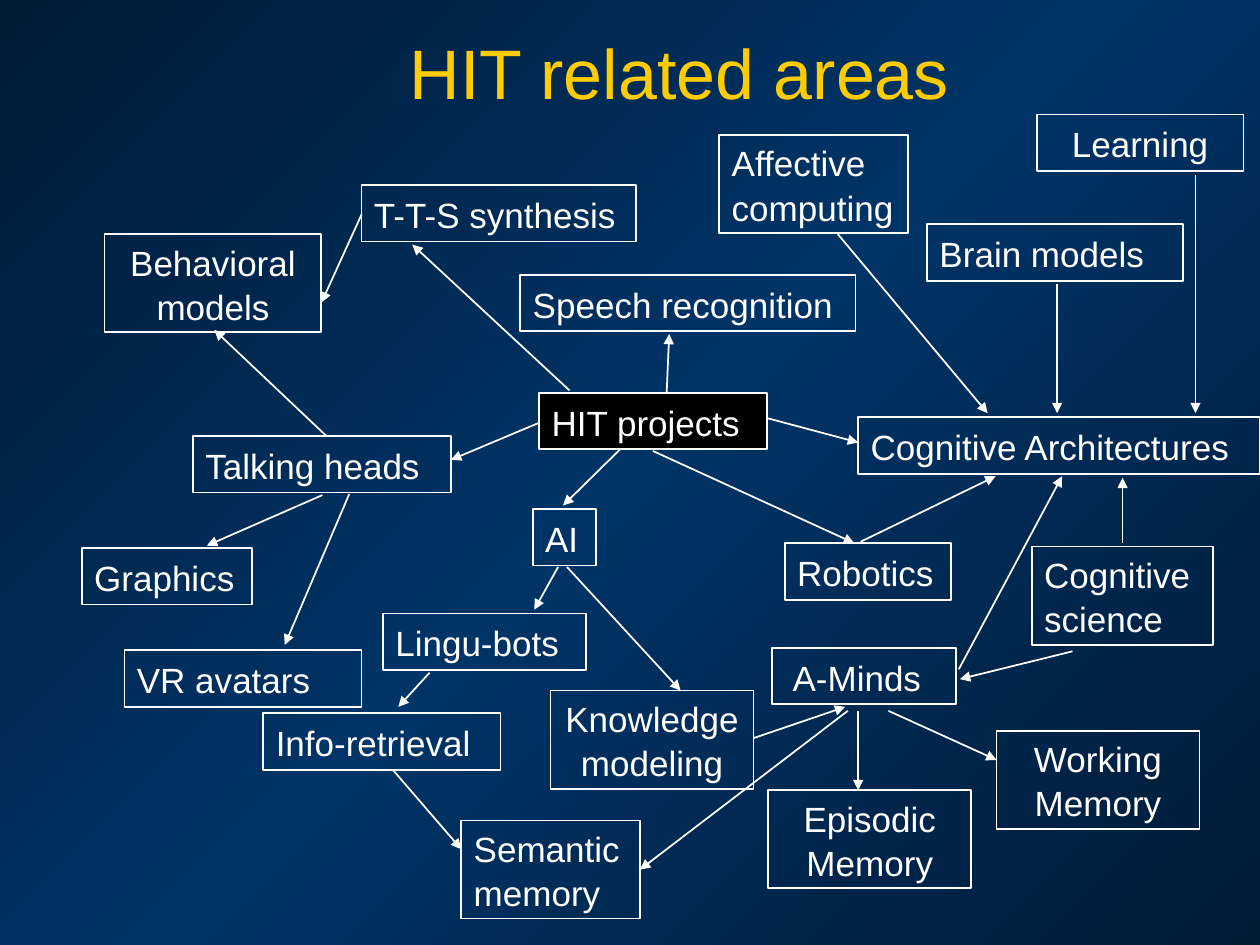
import copy

import pptx
import pptx.dml.color
import pptx.enum.shapes
import pptx.enum.text
import pptx.oxml
import pptx.oxml.ns
import pptx.util
from pptx.util import Cm

ALIGN = pptx.enum.text.PP_ALIGN
ANCHOR = pptx.enum.text.MSO_ANCHOR
NS = pptx.oxml.ns.nsdecls("a")
qn = pptx.oxml.ns.qn


def color(code):
    return pptx.dml.color.RGBColor.from_string(code)


class Chart:
    """Holds the style and the current slide of the concept map."""

    font = "Arial"
    white = "FFFFFF"
    gold = "FFCC00"
    dark = "001B36"
    blue = "003366"
    one_line = 1.14
    two_line = 1.98

    def __init__(self, deck):
        self.slide = deck.slides.add_slide(deck.slide_layouts[5])

    def ground(self):
        fill = self.slide.background.fill
        fill.gradient()
        fill.gradient_angle = 315
        stops = next(self.slide.element.iter(qn("a:gsLst")))
        stops.append(copy.deepcopy(stops[0]))
        shades = (self.dark, self.blue, self.dark)
        for n, (stop, shade) in enumerate(zip(fill.gradient_stops, shades)):
            stop.position = n / 2
            stop.color.rgb = color(shade)

    def label(self, para, text, size, tint):
        """Add the text run by run, with a line break between its lines."""
        for n, line in enumerate(text.split("\n")):
            if n:
                para.add_line_break()
            run = para.add_run()
            run.text = line
            run.font.name = self.font
            run.font.size = pptx.util.Pt(size)
            run.font.color.rgb = color(tint)
        return run

    def title(self, text, x, y, w, h):
        head = self.slide.shapes.title
        head.left, head.top, head.width, head.height = Cm(x), Cm(y), Cm(w), Cm(h)
        frame = head.text_frame
        frame.vertical_anchor = ANCHOR.MIDDLE
        para = frame.paragraphs[0]
        para.alignment = ALIGN.CENTER
        run = self.label(para, text, 40, self.gold)
        shade = pptx.oxml.parse_xml(
            f'<a:effectLst {NS}><a:outerShdw dist="35921" dir="2700000">'
            '<a:srgbClr val="808080"/></a:outerShdw></a:effectLst>')
        run.font._element.find(qn("a:solidFill")).addnext(shade)

    def box(self, text, x, y, w, rows=1, align=ALIGN.LEFT, fill=None):
        tall = self.one_line if rows == 1 else self.two_line
        shape = self.slide.shapes.add_shape(
            pptx.enum.shapes.MSO_SHAPE.RECTANGLE, Cm(x), Cm(y), Cm(w), Cm(tall))
        shape.shadow.inherit = False
        if fill:
            shape.fill.solid()
            shape.fill.fore_color.rgb = color(fill)
        else:
            shape.fill.background()
        self.stroke(shape.line)
        frame = shape.text_frame
        frame.word_wrap = True
        frame.vertical_anchor = ANCHOR.MIDDLE
        para = frame.paragraphs[0]
        para.alignment = align
        para.line_spacing = 1.05
        self.label(para, text, 20, self.white)

    def stroke(self, line):
        line.color.rgb = color(self.white)
        line.width = pptx.util.Pt(1)

    def arrow(self, *ends):
        link = self.slide.shapes.add_connector(
            pptx.enum.shapes.MSO_CONNECTOR.STRAIGHT, *map(Cm, ends))
        self.stroke(link.line)
        props = link._element.spPr
        props.find(qn("a:ln")).append(
            pptx.oxml.parse_xml(f'<a:tailEnd {NS} type="triangle"/>'))
        props.append(pptx.oxml.parse_xml(f"<a:effectLst {NS}/>"))


# text, left, top, width, rows, alignment, fill
BOXES = [
    ("HIT projects", 10.87, 7.92, 4.6, 1, ALIGN.LEFT, "000000"),
    ("T-T-S synthesis", 7.29, 3.73, 5.54),
    ("Speech recognition", 10.49, 5.54, 6.76),
    ("Talking heads", 3.89, 8.79, 5.21),
    ("Behavioral\nmodels", 2.11, 4.72, 4.37, 2, ALIGN.CENTER),
    ("Graphics", 1.65, 11.05, 3.43),
    ("Cognitive Architectures", 17.3, 8.41, 8.1),
    ("Cognitive science", 20.8, 11.02, 3.66, 2),
    ("AI", 10.74, 10.26, 1.27),
    (" A-Minds", 15.57, 13.06, 3.71),
    ("Lingu-bots", 7.72, 12.37, 4.09),
    ("Knowledge\nmodeling", 11.1, 13.92, 4.09, 2, ALIGN.CENTER),
    ("Info-retrieval", 5.31, 14.38, 4.78),
    ("VR avatars", 2.51, 13.11, 4.78),
    ("Robotics", 15.82, 10.95, 3.35),
    ("Brain models", 18.69, 4.52, 5.16),
    ("Affective\ncomputing", 14.5, 2.72, 3.81, 2),
    ("Episodic\nMemory", 15.49, 15.93, 4.09, 2, ALIGN.CENTER),
    ("Semantic memory", 9.3, 16.54, 3.61, 2),
    ("Working\nMemory", 20.09, 14.73, 4.09, 2, ALIGN.CENTER),
    ("Learning", 20.9, 2.31, 4.17, 1, ALIGN.CENTER),
]

# start x, start y, end x, end y
ARROWS = [
    # from HIT projects
    (13.44, 7.9, 13.49, 6.73),
    (11.48, 7.87, 8.31, 4.93),
    (10.85, 8.53, 9.09, 9.27),
    (15.47, 8.43, 17.3, 8.92),
    (13.16, 9.09, 17.22, 10.95),
    (12.52, 9.04, 11.35, 10.19),
    # from speech and talking heads
    (7.29, 4.32, 6.48, 6.1),
    (6.5, 9.98, 4.17, 11),
    (7.04, 9.96, 5.74, 13),
    (6.58, 8.79, 4.32, 6.65),
    # from AI and the bots
    (11.25, 11.43, 10.77, 12.29),
    (11.43, 11.43, 13.72, 13.92),
    (8.66, 13.56, 8.03, 14.25),
    (7.92, 15.52, 9.3, 17.12),
    # to and from A-Minds
    (21.62, 13.13, 19.35, 13.69),
    (15.19, 14.88, 17.04, 14.25),
    (17.91, 14.33, 20.09, 15.32),
    (17.3, 14.33, 17.3, 15.93),
    (17.09, 14.33, 12.9, 17.53),
    # to Cognitive Architectures
    (22.63, 10.95, 22.63, 9.63),
    (17.35, 10.92, 20.07, 9.6),
    (19.33, 13.49, 21.41, 9.6),
    (21.31, 5.72, 21.31, 8.33),
    (16.89, 4.72, 19.91, 8.33),
    (24.1, 3.53, 24.1, 8.33),
]


def main():
    deck = pptx.Presentation()
    deck.slide_width, deck.slide_height = Cm(25.4), Cm(19.05)
    chart = Chart(deck)
    chart.ground()
    chart.title("HIT related areas", 2.9, 0.33, 21.59, 2.21)
    for item in BOXES:
        chart.box(*item)
    for ends in ARROWS:
        chart.arrow(*ends)
    deck.save("out.pptx")


if __name__ == "__main__":
    main()
